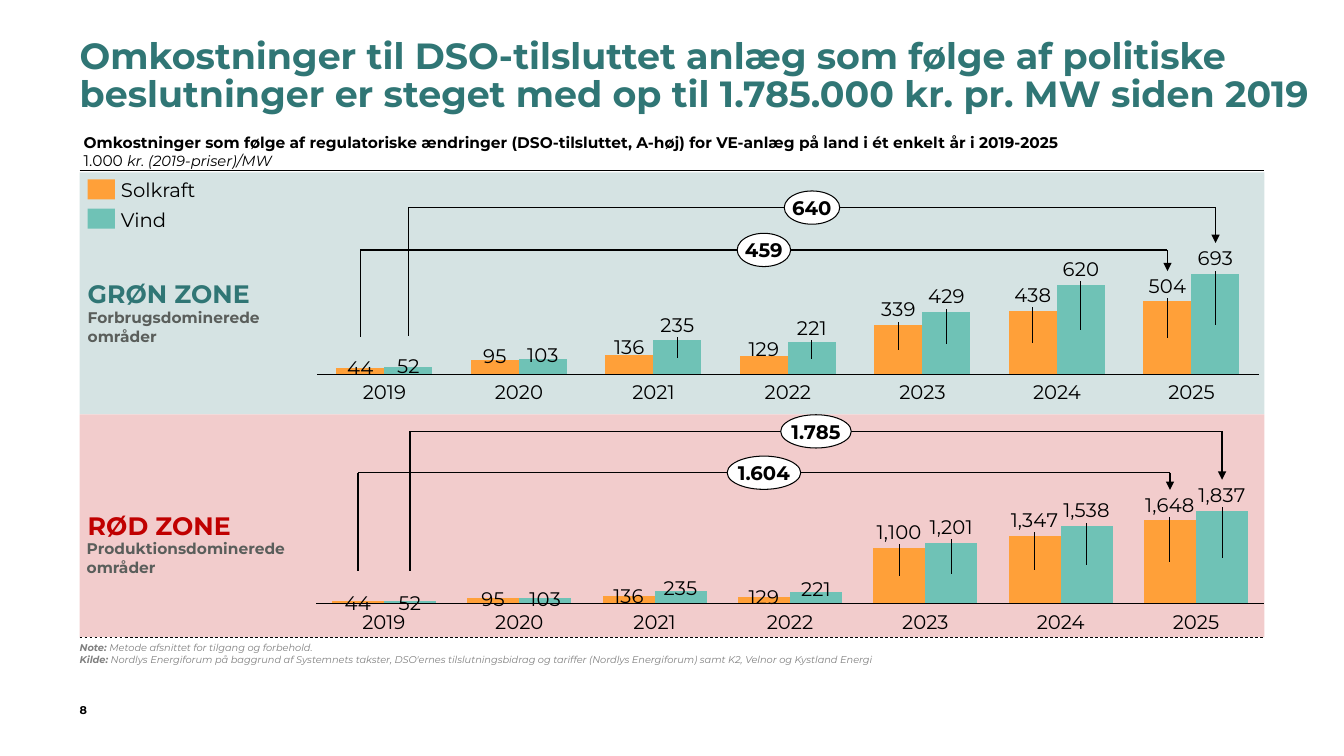
from dataclasses import dataclass

import pptx
import pptx.chart.data
import pptx.dml.color
import pptx.enum.chart
import pptx.enum.dml
import pptx.enum.shapes
import pptx.enum.text
import pptx.oxml
import pptx.oxml.ns
import pptx.util
from pptx.util import Inches

Align = pptx.enum.text.PP_ALIGN
Anchor = pptx.enum.text.MSO_ANCHOR
Shape = pptx.enum.shapes.MSO_SHAPE
Tick = pptx.enum.chart.XL_TICK_MARK
qn = pptx.oxml.ns.qn


@dataclass(frozen=True)
class Theme:
    font: str = "Montserrat"
    green: str = "307675"
    red: str = "C00000"
    solar: str = "FFA039"
    wind: str = "6FC2B6"
    black: str = "000000"
    white: str = "FFFFFF"
    subtitle: str = "5A5E5B"
    note: str = "808080"
    title_size: float = 26
    zone_size: float = 18
    label_size: float = 14
    text_size: float = 11
    unit_size: float = 10.5
    page_size: float = 8
    note_size: float = 7


T = Theme()


@dataclass(frozen=True)
class Run:
    text: str
    size: float
    color: str = T.black
    bold: bool = False
    italic: bool = False


@dataclass(frozen=True)
class Growth:
    text: str
    badge_width: float
    level: float  # height of the horizontal line
    start: float  # lower end on the 2019 side
    tip: float    # arrow tip on the 2025 side


@dataclass(frozen=True)
class Zone:
    name: str
    area: str
    color: str
    band: tuple[float, float]                  # top, height
    area_box: tuple[float, float, float, float]
    chart_box: tuple[float, float, float, float]
    plot: tuple[float, float, float, float]    # fractions of the chart
    gap: int
    years_top: float
    solar: tuple[int, ...]
    wind: tuple[int, ...]
    growths: tuple[Growth, Growth]             # solar, wind


YEARS = [str(year) for year in range(2019, 2026)]
BAND_LEFT, BAND_WIDTH = 0.79, 11.75
BADGE_HEIGHT = 0.33
LABEL_RISE = 0.15

ZONES = (
    Zone("GRØN ZONE", "Forbrugsdominerede områder", T.green, (1.71, 2.4),
         (0.87, 3.06, 2.23, 0.64), (3.06, 2.24, 9.52, 1.81),
         (0.009, 0.265, 0.981, 0.549), 80, 3.77,
         (44, 95, 136, 129, 339, 438, 504), (52, 103, 235, 221, 429, 620, 693),
         (Growth("459", 0.53, 2.48, 3.34, 2.69), Growth("640", 0.55, 2.06, 3.33, 2.41))),
    Zone("RØD ZONE", "Produktionsdominerede områder", T.red, (4.11, 2.21),
         (0.86, 5.35, 2.44, 0.64), (3.05, 4.59, 9.58, 1.73),
         (0.009, 0.277, 0.981, 0.53), 60, 6.05,
         (44, 95, 136, 129, 1100, 1347, 1648), (52, 103, 235, 221, 1201, 1538, 1837),
         (Growth("1.604", 0.73, 4.69, 5.66, 4.86), Growth("1.785", 0.7, 4.28, 5.66, 4.76))),
)


def rgb(color: str) -> pptx.dml.color.RGBColor:
    return pptx.dml.color.RGBColor.from_string(color)


def write(frame, lines: list[list[Run]], inset=(0, 0), wrap=True,
          align=Align.LEFT, anchor=Anchor.TOP) -> None:
    """Fill a text frame with one paragraph whose lines are made of runs."""
    frame.word_wrap, frame.vertical_anchor = wrap, anchor
    frame.margin_left = frame.margin_right = Inches(inset[0])
    frame.margin_top = frame.margin_bottom = Inches(inset[1])
    paragraph = frame.paragraphs[0]
    paragraph.alignment = align
    for index, line in enumerate(lines):
        if index:
            paragraph.add_line_break()
        for part in line:
            run = paragraph.add_run()
            run.text = part.text
            run.font.name, run.font.size = T.font, pptx.util.Pt(part.size)
            run.font.bold, run.font.italic = part.bold, part.italic
            run.font.color.rgb = rgb(part.color)


def add_text(slide, box, lines: list[list[Run]], **options) -> None:
    write(slide.shapes.add_textbox(*map(Inches, box)).text_frame, lines, **options)


def add_block(slide, kind, box, fill: str, outline: str | None = None):
    block = slide.shapes.add_shape(kind, *map(Inches, box))
    block.shadow.inherit = False
    block.fill.solid()
    block.fill.fore_color.rgb = rgb(fill)
    if outline:
        block.line.color.rgb = rgb(outline)
        block.line.width = pptx.util.Pt(0.75)
    else:
        block.line.fill.background()
    return block


def add_line(slide, start, end, width=1.0, dashed=False, arrow=False) -> None:
    line = slide.shapes.add_connector(pptx.enum.shapes.MSO_CONNECTOR.STRAIGHT,
                                      *map(Inches, (*start, *end)))
    line.line.color.rgb = rgb(T.black)
    line.line.width = pptx.util.Pt(width)
    if dashed:
        line.line.dash_style = pptx.enum.dml.MSO_LINE.DASH
    if arrow:
        line.line._get_or_add_ln().append(pptx.oxml.parse_xml(
            f'<a:tailEnd {pptx.oxml.ns.nsdecls("a")} type="triangle"/>'))
    line._element.spPr.append(pptx.oxml.parse_xml(f'<a:effectLst {pptx.oxml.ns.nsdecls("a")}/>'))


def layout_xml(**settings):
    inner = "".join(f'<c:{tag} val="{value}"/>' for tag, value in settings.items())
    return pptx.oxml.parse_xml(f'<c:layout {pptx.oxml.ns.nsdecls("c")}>'
                               f'<c:manualLayout>{inner}</c:manualLayout></c:layout>')


def label_bars(series, values, bar_unit: float, chart_height: float) -> None:
    """Lift each value from the middle of its bar and tie it with a leader line."""
    for index, value in enumerate(values):
        height = value * bar_unit
        label = series.points[index].data_label
        label.font.name, label.font.size = T.font, pptx.util.Pt(T.label_size)
        label.font.color.rgb = rgb(T.black)
        label.position = pptx.enum.chart.XL_LABEL_POSITION.CENTER
        rise = height / 2 + min(LABEL_RISE, 0.55 * height - 0.04)
        label._dLbl.find(qn("c:idx")).addnext(layout_xml(x=0, y=round(-rise / chart_height, 4)))
    series._element.find(qn("c:dLbls")).append(pptx.oxml.parse_xml(
        f'<c:extLst {pptx.oxml.ns.nsdecls("c")}><c:ext uri="{{CE6537A1-D6FC-4f65-9D91-7224C49458BB}}" '
        'xmlns:c15="http://schemas.microsoft.com/office/drawing/2012/chart">'
        '<c15:showLeaderLines val="1"/></c:ext></c:extLst>'))


def add_zone_chart(slide, zone: Zone) -> None:
    data = pptx.chart.data.CategoryChartData(number_format="#,##0")
    data.categories = YEARS
    data.add_series("Solkraft", zone.solar)
    data.add_series("Vind", zone.wind)
    chart = slide.shapes.add_chart(pptx.enum.chart.XL_CHART_TYPE.COLUMN_CLUSTERED,
                                   *map(Inches, zone.chart_box), data).chart
    chart.has_legend = chart.has_title = False
    chart.font.name, chart.font.size = T.font, pptx.util.Pt(T.label_size)
    chart.font.color.rgb = rgb(T.black)
    years, costs = chart.category_axis, chart.value_axis
    years.tick_label_position = pptx.enum.chart.XL_TICK_LABEL_POSITION.NONE
    years.major_tick_mark = years.minor_tick_mark = Tick.NONE
    years.format.line.color.rgb = rgb(T.black)
    years.format.line.width = pptx.util.Pt(0.75)
    peak = max(zone.wind)
    costs.minimum_scale, costs.maximum_scale = 0, peak
    costs.has_major_gridlines = costs.visible = False
    bars = chart.plots[0]
    bars.gap_width, bars.overlap, bars.vary_by_categories = zone.gap, 0, False
    chart_height = zone.chart_box[3]
    bar_unit = zone.plot[3] * chart_height / peak
    for series, values, color in zip(bars.series, (zone.solar, zone.wind), (T.solar, T.wind)):
        series.format.fill.solid()
        series.format.fill.fore_color.rgb = rgb(color)
        label_bars(series, values, bar_unit, chart_height)
    plot_area = chart._chartSpace.chart.plotArea
    for old in plot_area.findall(qn("c:layout")):
        plot_area.remove(old)
    x, y, w, h = zone.plot
    plot_area.insert(0, layout_xml(layoutTarget="inner", xMode="edge", yMode="edge",
                                   x=x, y=y, w=w, h=h))


def add_zone(slide, zone: Zone) -> None:
    # Tinted band with the zone name
    top, height = zone.band
    band = add_block(slide, Shape.RECTANGLE, (BAND_LEFT, top, BAND_WIDTH, height), zone.color)
    band.fill._xPr.find(".//" + qn("a:srgbClr")).append(pptx.oxml.parse_xml(
        f'<a:alpha {pptx.oxml.ns.nsdecls("a")} val="20000"/>'))
    write(band.text_frame, [[Run(zone.name, T.zone_size, zone.color, bold=True)]],
          inset=(0.08, 0.04), anchor=Anchor.MIDDLE)
    add_text(slide, zone.area_box, [[Run(zone.area, T.text_size, T.subtitle, bold=True)]])
    add_zone_chart(slide, zone)

    # Years under the bars
    pitch = zone.plot[2] * zone.chart_box[2] / len(YEARS)
    first = zone.chart_box[0] + zone.plot[0] * zone.chart_box[2] + pitch / 2
    for index, year in enumerate(YEARS):
        add_text(slide, (first + index * pitch - 0.24, zone.years_top, 0.48, 0.23),
                 [[Run(year, T.label_size)]], wrap=False, align=Align.CENTER)

    # Growth from 2019 to 2025
    half_bar = pitch / (2 + zone.gap / 100) / 2
    for growth, shift in zip(zone.growths, (-half_bar, half_bar)):
        left = first + shift
        right = left + pitch * (len(YEARS) - 1)
        add_line(slide, (left, growth.start), (left, growth.level))
        add_line(slide, (left, growth.level), (right, growth.level))
        add_line(slide, (right, growth.level), (right, growth.tip), arrow=True)
        badge = add_block(slide, Shape.OVAL,
                          ((left + right - growth.badge_width) / 2, growth.level - BADGE_HEIGHT / 2,
                           growth.badge_width, BADGE_HEIGHT), T.white, T.black)
        write(badge.text_frame, [[Run(growth.text, T.label_size, bold=True)]],
              wrap=False, align=Align.CENTER, anchor=Anchor.MIDDLE)


def main() -> None:
    deck = pptx.Presentation()
    deck.slide_width, deck.slide_height = Inches(13.33), Inches(7.5)
    slide = deck.slides.add_slide(deck.slide_layouts[5])

    # Title and chart heading
    title = slide.shapes.title
    title.left, title.top, title.width, title.height = map(Inches, (0.79, 0.39, 12.31, 0.91))
    write(title.text_frame, [[Run(
        "Omkostninger til DSO-tilsluttet anlæg som følge af politiske beslutninger "
        "er steget med op til 1.785.000 kr. pr. MW siden 2019", T.title_size, T.green, bold=True)]])
    title.text_frame.paragraphs[0].line_spacing = 0.87
    add_text(slide, (0.75, 1.28, 11.44, 0.39), [
        [Run("Omkostninger som følge af regulatoriske ændringer (DSO-tilsluttet, A-høj) "
             "for VE-anlæg på land i ét enkelt år i 2019-2025", T.text_size, bold=True)],
        [Run("1.000 ", T.text_size), Run("kr. (2019-priser)/MW", T.unit_size, italic=True)],
    ], inset=(0.08, 0.04))

    # Zones between two rules
    for zone in ZONES:
        add_zone(slide, zone)
    for y, width, dashed in ((1.69, 1, False), (6.32, 0.5, True)):
        add_line(slide, (BAND_LEFT, y), (BAND_LEFT + BAND_WIDTH, y), width, dashed)

    # Legend
    for index, (name, color) in enumerate((("Solkraft", T.solar), ("Vind", T.wind))):
        top = 1.78 + 0.29 * index
        add_block(slide, Shape.RECTANGLE, (0.87, top, 0.27, 0.2), color)
        add_text(slide, (1.2, top - 0.01, 0.75, 0.23), [[Run(name, T.label_size)]],
                 wrap=False, anchor=Anchor.MIDDLE)

    # Note, source and page number
    def note(text: str, bold: bool = False) -> Run:
        return Run(text, T.note_size, T.note, bold, italic=True)

    add_text(slide, (0.79, 6.37, 10.32, 0.4), [
        [note("Note: ", True), note("Metode afsnittet for tilgang og forbehold.")],
        [note("Kilde:", True),
         note(" Nordlys Energiforum på baggrund af Systemnets takster, DSO'ernes tilslutningsbidrag "
              "og tariffer (Nordlys Energiforum) samt K2, Velnor og Kystland Energi")],
    ])
    add_text(slide, (0.79, 6.91, 0.37, 0.2), [[Run("8", T.page_size, bold=True)]],
             anchor=Anchor.BOTTOM)
    deck.save("out.pptx")


if __name__ == "__main__":
    main()
